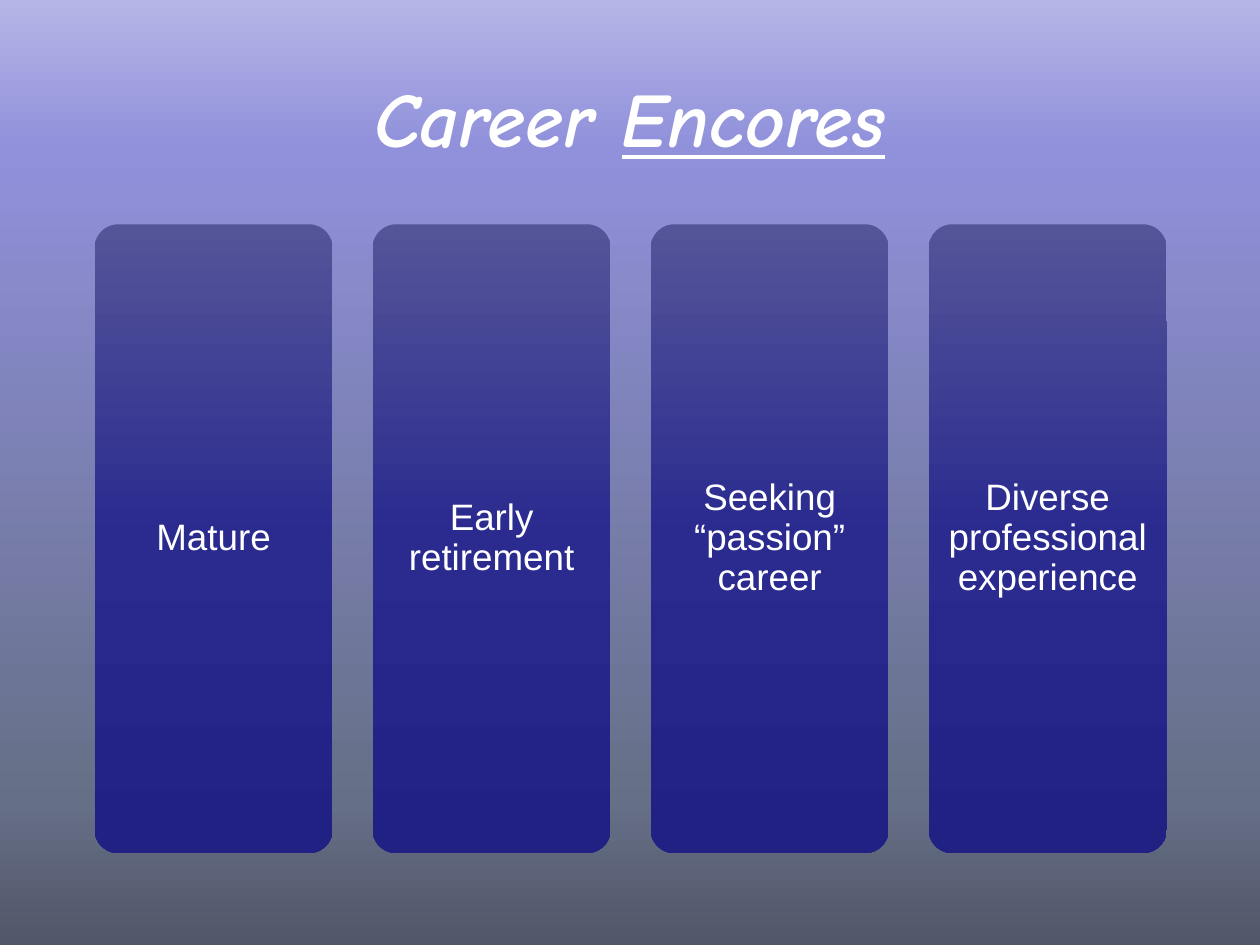
from lxml import etree
from pptx import Presentation
from pptx.dml.color import RGBColor
from pptx.enum.shapes import MSO_SHAPE
from pptx.enum.text import MSO_ANCHOR, PP_ALIGN
from pptx.oxml.ns import qn
from pptx.util import Inches, Pt

ROUNDED = MSO_SHAPE.ROUNDED_RECTANGLE
MIDDLE = MSO_ANCHOR.MIDDLE
CENTER = PP_ALIGN.CENTER

WHITE = "FFFFFF"
BACKDROP_STOPS = [(0, "525669"), (15, "656F86"), (84, "9090DB"), (100, "B5B5E7")]
CARD_STOPS = [(0, "545499"), (50, "2A2A8F"), (100, "212184")]
TITLE_FONT = {"name": "Comic Neue", "size": Pt(44), "bold": True, "italic": True}
CARD_FONT = {"name": "Arial", "size": Pt(21)}

TITLE_BOX = (0.5, 0.3, 9, 1.25)
CARDS_BOX = (0.75, 1.78, 8.51, 4.99)
CARD_WIDTH = 1.89
CARD_INSET = 0.09
TRAITS = [
    "Mature",
    "Early retirement",
    "Seeking “passion” career",
    "Diverse professional experience",
]


def color(hex_value):
    """Turn a hex string into a colour."""
    return RGBColor.from_string(hex_value)


def set_gradient(fill, element, stops, angle):
    """Give a fill the listed stops, with its angle counted counter-clockwise."""
    fill.gradient()
    fill.gradient_angle = angle
    stop_list = element.find(f".//{qn('a:gsLst')}")
    for old_stop in list(stop_list):
        stop_list.remove(old_stop)
    for percent, hex_value in stops:
        stop = etree.SubElement(stop_list, qn("a:gs"), pos=str(percent * 1000))
        etree.SubElement(stop, qn("a:srgbClr"), val=hex_value)


def add_run(paragraph, text, font_values):
    """Add a white run with the given font values."""
    run = paragraph.add_run()
    run.text = text
    run.font.color.rgb = color(WHITE)
    for attribute, value in font_values.items():
        setattr(run.font, attribute, value)


def centered_paragraph(frame):
    """Centre a wrapped text frame both ways and return its first paragraph."""
    frame.word_wrap = True
    frame.vertical_anchor = MIDDLE
    paragraph = frame.paragraphs[0]
    paragraph.alignment = CENTER
    return paragraph


def add_title(slide, box):
    """Place the heading with its last word underlined."""
    heading = slide.shapes.add_textbox(*map(Inches, box))
    paragraph = centered_paragraph(heading.text_frame)
    add_run(paragraph, "Career ", TITLE_FONT)
    add_run(paragraph, "Encores", {**TITLE_FONT, "underline": True})


def add_card(slide, box, trait):
    """Place one rounded gradient card with its trait."""
    card = slide.shapes.add_shape(ROUNDED, *map(Inches, box))
    card.adjustments[0] = 0.1
    card.shadow.inherit = False
    card.line.fill.background()
    set_gradient(card.fill, card.element, CARD_STOPS, 270)
    frame = card.text_frame
    for side in ("left", "top", "right", "bottom"):
        setattr(frame, f"margin_{side}", Inches(CARD_INSET))
    paragraph = centered_paragraph(frame)
    paragraph.line_spacing = 0.9
    add_run(paragraph, trait, CARD_FONT)


def add_cards(slide, box, traits):
    """Spread the cards evenly across the box."""
    left, top, width, height = box
    pitch = (width - CARD_WIDTH) / (len(traits) - 1)
    for column, trait in enumerate(traits):
        add_card(slide, (left + column * pitch, top, CARD_WIDTH, height), trait)


def main():
    """Build and save the slide."""
    deck = Presentation()
    deck.slide_width, deck.slide_height = Inches(10), Inches(7.5)
    slide = deck.slides.add_slide(deck.slide_layouts[6])
    set_gradient(slide.background.fill, slide.element, BACKDROP_STOPS, 90)
    add_title(slide, TITLE_BOX)
    add_cards(slide, CARDS_BOX, TRAITS)
    deck.save("out.pptx")


if __name__ == "__main__":
    main()
